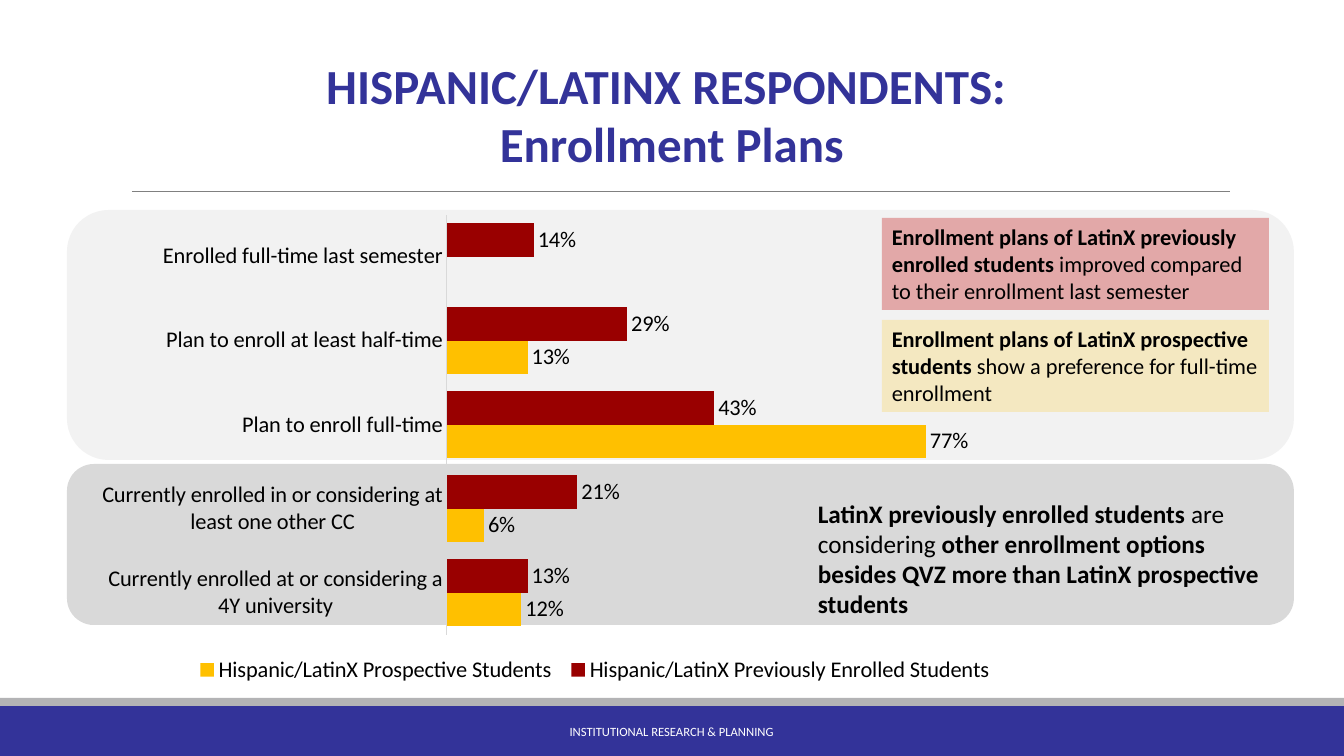
import pptx
import pptx.chart.data
import pptx.dml.color
import pptx.enum.chart
import pptx.enum.shapes
import pptx.enum.text
import pptx.oxml
import pptx.oxml.ns
import pptx.util
from lxml import etree

PX = 914400 / 100.8
FONT = "Calibri"
INDIGO, BLACK, WHITE = "333399", "000000", "FFFFFF"
SHAPES = pptx.enum.shapes.MSO_SHAPE
ALIGN = pptx.enum.text.PP_ALIGN


def paint(color_format, color):
    """Apply a hex colour to a solid fill, line fill or font."""
    if hasattr(color_format, "solid"):
        color_format.solid()
        color_format.fore_color.rgb = pptx.dml.color.RGBColor.from_string(color)
    else:
        color_format.color.rgb = pptx.dml.color.RGBColor.from_string(color)


def write(shape, paragraphs, size, color, alignment=ALIGN.LEFT):
    """Fill a shape with paragraphs, each a list of (text, bold) runs."""
    frame = shape.text_frame
    frame.word_wrap = True
    for index, runs in enumerate(paragraphs):
        paragraph = frame.add_paragraph() if index else frame.paragraphs[0]
        paragraph.alignment = alignment
        for text, bold in runs:
            run = paragraph.add_run()
            run.text = text
            run.font.name = FONT
            run.font.size = pptx.util.Pt(size)
            run.font.bold = bold
            paint(run.font, color)


presentation = pptx.Presentation()
presentation.slide_width = round(1344 * PX)
presentation.slide_height = round(756 * PX)
slide = presentation.slides.add_slide(presentation.slide_layouts[5])

# Title
title = slide.shapes.title
title.left, title.top, title.width, title.height = [
    round(length * PX) for length in (108, 50, 1128, 129)]
title.text_frame.vertical_anchor = pptx.enum.text.MSO_ANCHOR.TOP
title.text_frame.auto_size = pptx.enum.text.MSO_AUTO_SIZE.NONE
write(title, [[("HISPANIC/LATINX RESPONDENTS: ", True)], [("Enrollment Plans", True)]],
      35, INDIGO, ALIGN.CENTER)

# Footer bands, chart panels and tinted callouts
blocks = [
    (SHAPES.RECTANGLE, (0, 706, 1344, 50), INDIGO, 100, []),
    (SHAPES.RECTANGLE, (0, 698, 1344, 8), "B3B3B5", 100, []),
    (SHAPES.ROUNDED_RECTANGLE, (67, 464, 1227, 161), "D9D9D9", 100, []),
    (SHAPES.ROUNDED_RECTANGLE, (67, 210, 1227, 250), "F2F2F2", 100, []),
    (SHAPES.RECTANGLE, (882, 218, 387, 92), "C00000", 30,
     [("Enrollment plans of LatinX previously enrolled students ", True),
      ("improved compared to their enrollment last semester", False)]),
    (SHAPES.RECTANGLE, (882, 320, 387, 92), "FFC000", 20,
     [("Enrollment plans of LatinX prospective students ", True),
      ("show a preference for full-time enrollment", False)]),
]
for preset, box, color, opacity, runs in blocks:
    block = slide.shapes.add_shape(preset, *[round(length * PX) for length in box])
    block.shadow.inherit = False
    block.line.fill.background()
    paint(block.fill, color)
    if opacity < 100:
        fill_color = block.fill._xPr.find(".//" + pptx.oxml.ns.qn("a:srgbClr"))
        etree.SubElement(fill_color, pptx.oxml.ns.qn("a:alpha"), val=str(opacity * 1000))
    if runs:
        block.text_frame.vertical_anchor = pptx.enum.text.MSO_ANCHOR.TOP
        write(block, [runs], 16, BLACK)

# Rule under the title
rule = slide.shapes.add_connector(
    pptx.enum.shapes.MSO_CONNECTOR.STRAIGHT,
    *[round(length * PX) for length in (132, 191, 1230, 191)])
rule.line.width = pptx.util.Pt(0.5)
paint(rule.line.fill, "808080")
etree.SubElement(rule._element.spPr, pptx.oxml.ns.qn("a:effectLst"))

# Footer text and the remark on other enrollment options
footer = slide.shapes.add_textbox(*[round(length * PX) for length in (406, 712, 531, 40)])
footer.text_frame.vertical_anchor = pptx.enum.text.MSO_ANCHOR.MIDDLE
write(footer, [[("INSTITUTIONAL RESEARCH & PLANNING", False)]], 9, WHITE, ALIGN.CENTER)

remark = slide.shapes.add_textbox(*[round(length * PX) for length in (808, 493, 472, 132)])
write(remark, [[
    ("LatinX previously enrolled students ", True),
    ("are considering ", False),
    ("other enrollment options besides QVZ more than LatinX prospective students", True),
]], 18, BLACK)

# Enrollment chart
chart_data = pptx.chart.data.CategoryChartData(number_format="0%")
chart_data.categories = [
    "Enrolled full-time last semester",
    "Plan to enroll at least half-time",
    "Plan to enroll full-time",
    "Currently enrolled in or considering at least one other CC",
    "Currently enrolled at or considering a 4Y university",
]
chart_data.add_series("Hispanic/LatinX Previously Enrolled Students",
                      (0.14, 0.29, 0.43, 0.21, 0.13))
chart_data.add_series("Hispanic/LatinX Prospective Students ",
                      (None, 0.13, 0.77, 0.06, 0.12))
chart = slide.shapes.add_chart(
    pptx.enum.chart.XL_CHART_TYPE.BAR_CLUSTERED,
    *[round(length * PX) for length in (101, 205, 988, 483)], chart_data).chart
chart.has_title = False
chart.font.name = FONT
chart.font.size = pptx.util.Pt(16)
paint(chart.font, BLACK)

chart.has_legend = True
chart.legend.position = pptx.enum.chart.XL_LEGEND_POSITION.BOTTOM
chart.legend.include_in_layout = False

category_axis = chart.category_axis
category_axis.reverse_order = True
category_axis.major_tick_mark = pptx.enum.chart.XL_TICK_MARK.NONE
category_axis.format.line.width = pptx.util.Pt(0.75)
paint(category_axis.format.line.fill, "D9D9D9")

value_axis = chart.value_axis
value_axis.minimum_scale = 0
value_axis.maximum_scale = 1
value_axis.has_major_gridlines = False
value_axis.visible = False

plot = chart.plots[0]
plot.gap_width = 50
plot.overlap = 0
plot.vary_by_categories = False
for series, color in zip(plot.series, ("990000", "FFC000")):
    paint(series.format.fill, color)
    series.invert_if_negative = False
    labels = series.data_labels
    labels.show_value = True
    labels.position = pptx.enum.chart.XL_LABEL_POSITION.OUTSIDE_END
    labels.number_format = "0%"
    labels.number_format_is_linked = False
    labels.font.name = FONT
    labels.font.size = pptx.util.Pt(16)
    paint(labels.font, BLACK)

# Fixed inner plot area, as fractions of the chart
plot_area = chart._chartSpace.chart.plotArea
for layout in plot_area.findall(pptx.oxml.ns.qn("c:layout")):
    plot_area.remove(layout)
layout = etree.Element(pptx.oxml.ns.qn("c:layout"))
manual = etree.SubElement(layout, pptx.oxml.ns.qn("c:manualLayout"))
for name, value in (("layoutTarget", "inner"), ("xMode", "edge"), ("yMode", "edge"),
                    ("x", 0.35), ("y", 0.02), ("w", 0.63), ("h", 0.87)):
    etree.SubElement(manual, pptx.oxml.ns.qn("c:" + name), val=str(value))
plot_area.insert(0, layout)

presentation.save("out.pptx")
